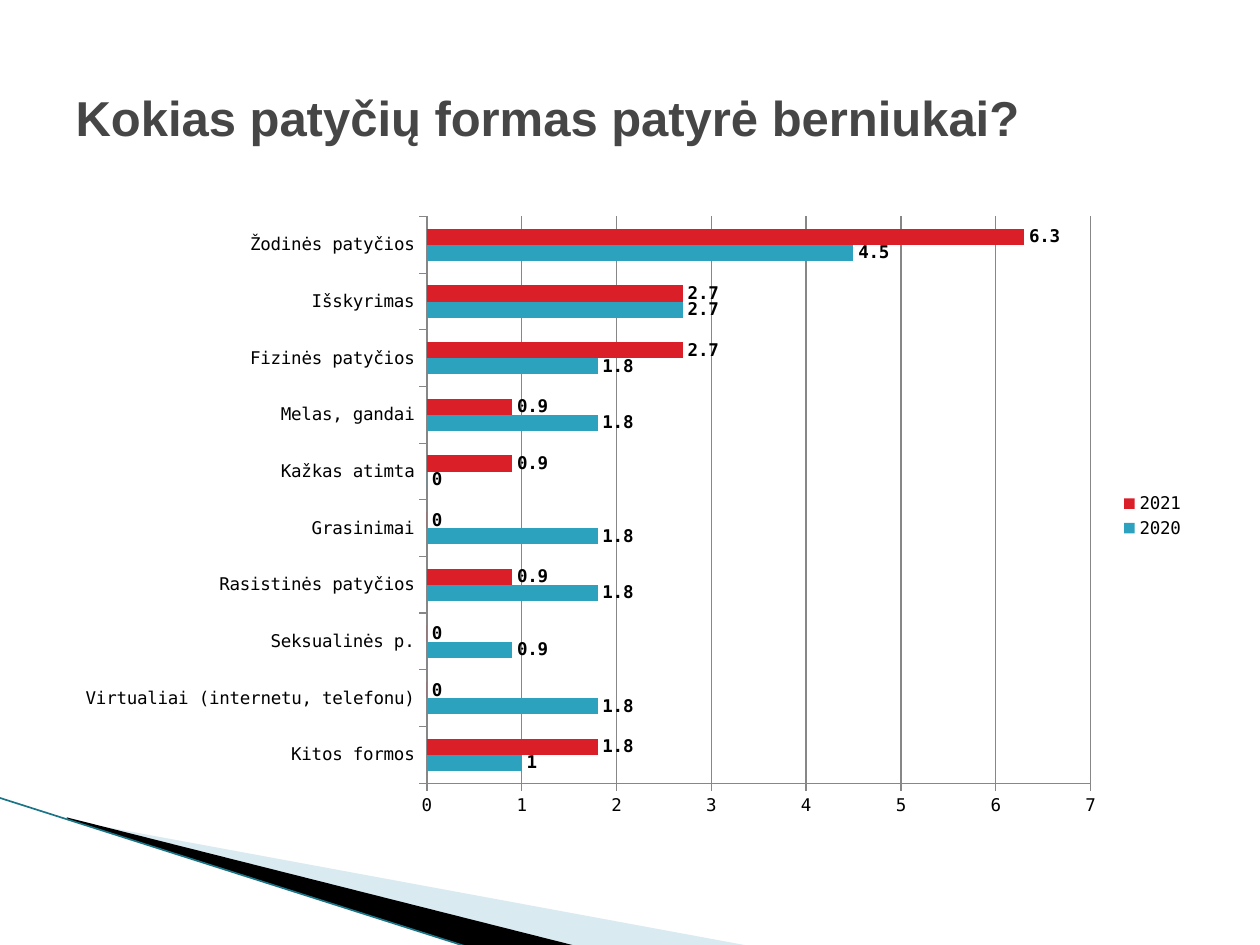
from lxml.etree import SubElement
from pptx import Presentation
from pptx.chart.data import CategoryChartData as Data
from pptx.dml.color import RGBColor as Rgb
from pptx.enum.chart import XL_CHART_TYPE as Kind, XL_LABEL_POSITION as Spot
from pptx.enum.chart import XL_LEGEND_POSITION as Side, XL_TICK_MARK as Tick
from pptx.enum.shapes import MSO_CONNECTOR as Link
from pptx.enum.text import MSO_ANCHOR as Anchor, PP_ALIGN as Align
from pptx.oxml.ns import qn
from pptx.util import Inches, Pt

WIDE, HIGH = Inches(10), Inches(7.5)
HUES = {"title": "464646", "text": "000000", "grid": "878787", "pale": "A0CBDC",
        "dark": "000000", "edge": "1B7587", "2020": "2DA2BF", "2021": "DA1F28"}
TITLE = {"name": "Arial", "size": Pt(28), "bold": True}
LABEL = {"name": "DejaVu Sans Mono", "size": Pt(10), "bold": False}
FORMS = {  # form of bullying: (2020, 2021)
    "Kitos formos": (1, 1.8),
    "Virtualiai (internetu, telefonu)": (1.8, 0),
    "Seksualinės p.": (0.9, 0),
    "Rasistinės patyčios": (1.8, 0.9),
    "Grasinimai": (1.8, 0),
    "Kažkas atimta": (0, 0.9),
    "Melas, gandai": (1.8, 0.9),
    "Fizinės patyčios": (1.8, 2.7),
    "Išskyrimas": (2.7, 2.7),
    "Žodinės patyčios": (4.5, 6.3),
}
# Corners in percent of the slide's width and height
PALE = [(5.5, 86.8), (59.5, 100.1), (45.6, 100.1), (5.5, 86.7)]
DARK = [(5.3, 86.5), (45.7, 100.1), (37.2, 100.2), (5.4, 86.7)]
EDGE = [(-0.1, 84.4), (37.1, 100.2)]


def at(x, y):
    """Turn percent of the slide into lengths."""
    return round(WIDE * x / 100), round(HIGH * y / 100)


def hue(key):
    return Rgb.from_string(HUES[key])


def style(font, key, form):
    for name, value in form.items():
        setattr(font, name, value)
    font.color.rgb = hue(key)


def add_band(slide, dots, key, alpha=100):
    first, *rest = [at(*dot) for dot in dots]
    pen = slide.shapes.build_freeform(*first)
    pen.add_line_segments(rest, close=True)
    band = pen.convert_to_shape()
    band.shadow.inherit = False
    band.fill.solid()
    band.fill.fore_color.rgb = hue(key)
    band.line.fill.background()
    if alpha < 100:
        tint = band.fill._xPr.find(".//" + qn("a:srgbClr"))
        SubElement(tint, qn("a:alpha"), val=str(alpha * 1000))


def add_edge(slide):
    start, end = EDGE
    edge = slide.shapes.add_connector(Link.STRAIGHT, *at(*start), *at(*end))
    edge.line.color.rgb = hue("edge")
    edge.line.width = Pt(0.95)
    SubElement(edge._element.spPr, qn("a:effectLst"))


def set_title(slide, text):
    title = slide.shapes.title
    title.left, title.top = at(5, 4)
    title.width, title.height = at(90, 16.67)
    frame = title.text_frame
    frame.text = text
    frame.vertical_anchor = Anchor.MIDDLE
    para = frame.paragraphs[0]
    para.alignment = Align.LEFT
    style(para.runs[0].font, "title", TITLE)


def set_axis(axis, grid):
    axis.has_major_gridlines = grid
    axis.major_tick_mark = Tick.OUTSIDE
    axis.minor_tick_mark = Tick.NONE
    lines = [axis.format.line]
    if grid:
        lines.append(axis.major_gridlines.format.line)
    for line in lines:
        line.color.rgb = hue("grid")
        line.width = Pt(0.75)


def add_bars(slide):
    data = Data()
    data.categories = list(FORMS)
    for year, vals in zip(("2020", "2021"), zip(*FORMS.values())):
        data.add_series(year, vals)
    chart = slide.shapes.add_chart(Kind.BAR_CLUSTERED, *at(5, 21.6),
                                   *at(90, 66), data).chart
    style(chart.font, "text", LABEL)
    chart.has_title = False
    chart.has_legend = True
    chart.legend.position = Side.RIGHT
    chart.legend.include_in_layout = False
    set_axis(chart.category_axis, False)
    set_axis(chart.value_axis, True)
    plot = chart.plots[0]
    plot.gap_width = 150
    plot.vary_by_categories = False
    for series in plot.series:
        series.invert_if_negative = False
        series.format.fill.solid()
        series.format.fill.fore_color.rgb = hue(series.name)
        labels = series.data_labels
        labels.show_value = True
        labels.position = Spot.OUTSIDE_END
        style(labels.font, "text", LABEL | {"bold": True})


def main():
    deck = Presentation()
    deck.slide_width, deck.slide_height = WIDE, HIGH
    slide = deck.slides.add_slide(deck.slide_layouts[5])
    add_band(slide, PALE, "pale", 40)
    add_band(slide, DARK, "dark")
    add_edge(slide)
    add_bars(slide)
    set_title(slide, "Kokias patyčių formas patyrė berniukai?")
    deck.save("out.pptx")


if __name__ == "__main__":
    main()
